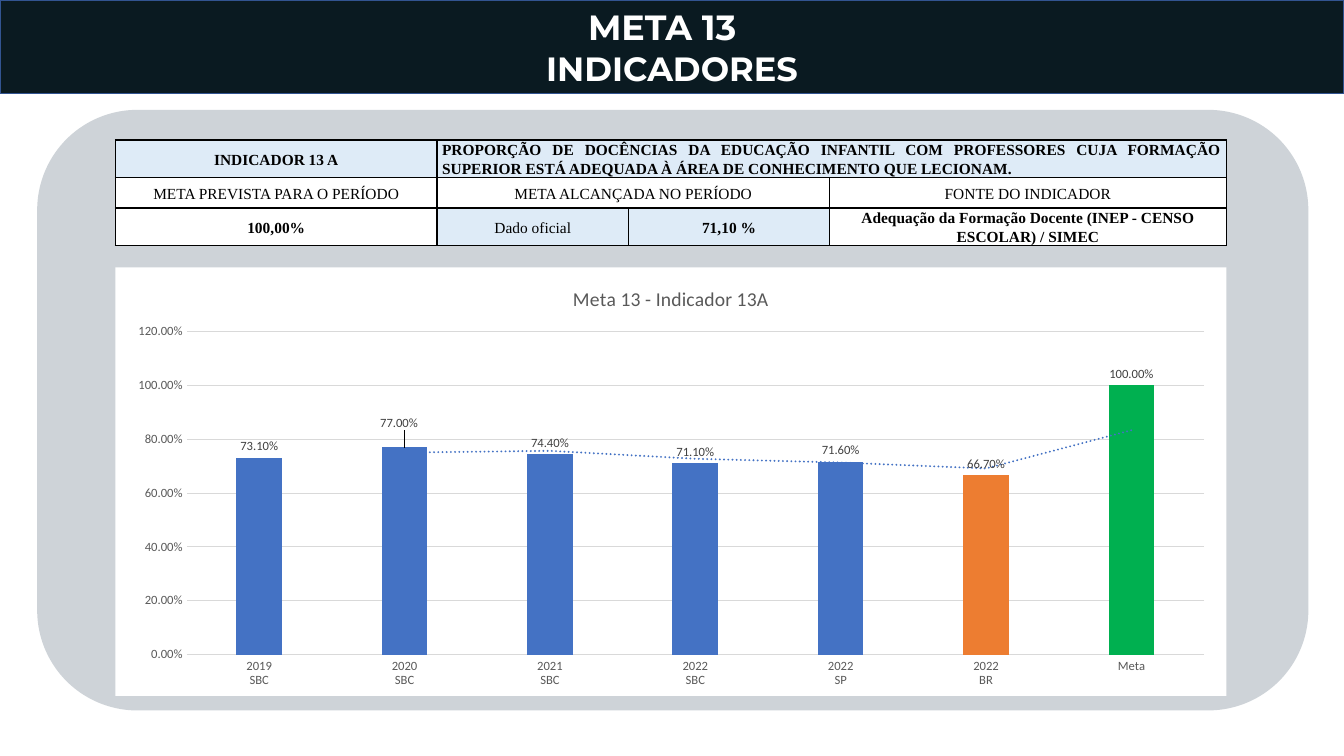
from lxml import etree
from pptx import Presentation
from pptx.chart.data import CategoryChartData
from pptx.dml.color import RGBColor
from pptx.enum.chart import XL_CHART_TYPE, XL_LABEL_POSITION, XL_TICK_MARK
from pptx.enum.shapes import MSO_SHAPE
from pptx.enum.text import MSO_ANCHOR, MSO_AUTO_SIZE, PP_ALIGN
from pptx.util import Pt

COLUMNS = XL_CHART_TYPE.COLUMN_CLUSTERED
OUTSIDE = XL_LABEL_POSITION.OUTSIDE_END
NO_TICK = XL_TICK_MARK.NONE
ROUNDED = MSO_SHAPE.ROUNDED_RECTANGLE
MIDDLE = MSO_ANCHOR.MIDDLE
NO_FIT = MSO_AUTO_SIZE.NONE
CENTER, JUSTIFY = PP_ALIGN.CENTER, PP_ALIGN.JUSTIFY

COLORS = {
    "navy": "0A1A21", "edge": "325491", "panel": "CED3D8", "white": "FFFFFF",
    "black": "000000", "pale": "DEEBF7", "grid": "D9D9D9", "gray": "595959",
    "label": "404040", "blue": "4472C4", "orange": "ED7D31", "green": "00B050",
}
A = "http://schemas.openxmlformats.org/drawingml/2006/main"
C = "http://schemas.openxmlformats.org/drawingml/2006/chart"

# Table rows: text, bold, fill, number of columns covered
ROWS = [
    [("INDICADOR 13 A", True, "pale", 1),
     ("PROPORÇÃO DE DOCÊNCIAS DA EDUCAÇÃO INFANTIL COM PROFESSORES CUJA "
      "FORMAÇÃO SUPERIOR ESTÁ ADEQUADA À ÁREA DE CONHECIMENTO QUE LECIONAM.",
      True, "pale", 3)],
    [("META PREVISTA PARA O PERÍODO", False, "white", 1),
     ("META ALCANÇADA NO PERÍODO", False, "white", 2),
     ("FONTE DO INDICADOR", False, "white", 1)],
    [("100,00%", True, "white", 1),
     ("Dado oficial", False, "pale", 1),
     ("71,10 %", True, "pale", 1),
     ("Adequação da Formação Docente (INEP - CENSO ESCOLAR) / SIMEC",
      True, "white", 1)],
]
COLUMN_WIDTHS = [229.7, 136.8, 143.6, 283.4]
ROW_HEIGHTS = [23, 21.6, 23]

VALUES = {
    "2019\nSBC": 0.731, "2020\nSBC": 0.77, "2021\nSBC": 0.744,
    "2022\nSBC": 0.711, "2022\nSP": 0.716, "2022\nBR": 0.667, "Meta": 1,
}
POINT_COLORS = {5: "orange", 6: "green"}


def rgb(name):
    return RGBColor.from_string(COLORS[name])


def xml(text):
    return etree.fromstring(text.replace(">", f' xmlns:a="{A}" xmlns:c="{C}">', 1))


def apply(target, values):
    for name, value in values.items():
        setattr(target, name, value)


def paint(fill, color):
    fill.solid()
    fill.fore_color.rgb = rgb(color)


def manual_layout(target, **places):
    inner = "".join(f'<c:{name} val="{value}"/>' for name, value in places.items())
    return xml(f"<c:layout><c:manualLayout>{target}{inner}</c:manualLayout></c:layout>")


class SlideBuilder:
    def __init__(self, deck, font):
        self.font = font
        self.page = deck.slides.add_slide(deck.slide_layouts[5])

    def style(self, font, size, color, bold=False, name=None):
        apply(font, {"name": name or self.font, "size": Pt(size), "bold": bold})
        font.color.rgb = rgb(color)

    def banner(self, place, lines):
        box = self.page.shapes.title
        apply(box, dict(zip(("left", "top", "width", "height"), map(Pt, place))))
        paint(box.fill, "navy")
        box.line.color.rgb = rgb("edge")
        box.line.width = Pt(1)
        frame = box.text_frame
        apply(frame, {"auto_size": NO_FIT, "word_wrap": True,
                      "vertical_anchor": MIDDLE})
        for number, (text, size, right_indent) in enumerate(lines):
            para = frame.add_paragraph() if number else frame.paragraphs[0]
            para.alignment = CENTER
            para._p.get_or_add_pPr().set("marR", str(Pt(right_indent)))
            span = para.add_run()
            span.text = text
            self.style(span.font, size, "white", True, "Montserrat")

    def panel(self, place):
        box = self.page.shapes.add_shape(ROUNDED, *map(Pt, place))
        box.shadow.inherit = False
        paint(box.fill, "panel")
        box.line.fill.background()

    def cell(self, cell, text, bold, fill, align):
        apply(cell, {"vertical_anchor": MIDDLE,
                     "margin_left": Pt(3.6), "margin_right": Pt(3.6),
                     "margin_top": Pt(0.7), "margin_bottom": 0})
        paint(cell.fill, fill)
        properties = cell._tc.get_or_add_tcPr()
        for index, side in enumerate("LRTB"):
            properties.insert(index, xml(
                f'<a:ln{side} w="{Pt(1)}"><a:solidFill><a:srgbClr '
                f'val="{COLORS["black"]}"/></a:solidFill></a:ln{side}>'))
        para = cell.text_frame.paragraphs[0]
        apply(para, {"alignment": align, "line_spacing": 1.07, "space_after": Pt(8)})
        self.style(para.font, 11, "black", bold, "Times New Roman")
        if text:
            span = para.add_run()
            span.text = text
            self.style(span.font, 11, "black", bold, "Times New Roman")

    def table(self, place, rows):
        table = self.page.shapes.add_table(
            len(rows), len(COLUMN_WIDTHS), *map(Pt, place)).table
        apply(table, {"first_row": False, "horz_banding": False})
        for column, width in zip(table.columns, COLUMN_WIDTHS):
            column.width = Pt(width)
        for number, (row, height) in enumerate(zip(rows, ROW_HEIGHTS)):
            table.rows[number].height = Pt(height)
            start = 0
            for text, bold, fill, count in row:
                align = JUSTIFY if count == 3 else CENTER
                for column in range(start, start + count):
                    self.cell(table.cell(number, column),
                              text if column == start else "", bold, fill, align)
                if count > 1:
                    table.cell(number, start).merge(
                        table.cell(number, start + count - 1))
                start += count

    def chart(self, place, title, values):
        data = CategoryChartData(number_format="0.00%")
        data.categories = list(values)
        data.add_series("Series 1", list(values.values()))
        chart = self.page.shapes.add_chart(COLUMNS, *map(Pt, place), data).chart
        self.style(chart.font, 10, "black")
        chart.has_legend = False
        chart.has_title = True
        chart.chart_title.include_in_layout = False
        span = chart.chart_title.text_frame.paragraphs[0].add_run()
        span.text = title
        self.style(span.font, 14, "gray")

        # White background and plot position
        root = chart._chartSpace
        root.find(f"{{{C}}}chart").addnext(xml(
            f'<c:spPr><a:solidFill><a:srgbClr val="{COLORS["white"]}"/></a:solidFill>'
            "<a:ln><a:noFill/></a:ln></c:spPr>"))
        area = root.find(f".//{{{C}}}plotArea")
        for old in area.findall(f"{{{C}}}layout"):
            area.remove(old)
        area.insert(0, manual_layout(
            '<c:layoutTarget val="inner"/>', xMode="edge", yMode="edge",
            x=0.064, y=0.15, w=0.916, h=0.754))

        # Axes
        category, value = chart.category_axis, chart.value_axis
        for axis in (category, value):
            apply(axis, {"major_tick_mark": NO_TICK, "minor_tick_mark": NO_TICK})
            self.style(axis.tick_labels.font, 9, "gray")
        apply(value, {"minimum_scale": 0, "maximum_scale": 1.2, "major_unit": 0.2})
        apply(value.tick_labels, {"number_format": "0.00%",
                                  "number_format_is_linked": False})
        value.format.line.fill.background()
        for line in (category.format.line, value.major_gridlines.format.line):
            line.color.rgb = rgb("grid")
            line.width = Pt(0.75)

        # Columns and labels
        plot = chart.plots[0]
        apply(plot, {"gap_width": 219, "overlap": -27, "vary_by_categories": False})
        series = plot.series[0]
        paint(series.format.fill, "blue")
        for index, color in POINT_COLORS.items():
            paint(series.points[index].format.fill, color)
        labels = series.data_labels
        apply(labels, {"show_value": True, "position": OUTSIDE,
                       "number_format": "0.00%", "number_format_is_linked": False})
        self.style(labels.font, 9, "label")
        raised = series.points[1].data_label
        raised.position = OUTSIDE
        self.style(raised.font, 9, "label")
        series._element.find(f".//{{{C}}}dLbl").insert(
            1, manual_layout("", x=-0.005, y=-0.03))

        # Two-period moving average
        series._element.find(f"{{{C}}}cat").addprevious(xml(
            f'<c:trendline><c:spPr><a:ln w="{Pt(1.5)}" cap="rnd"><a:solidFill>'
            f'<a:srgbClr val="{COLORS["blue"]}"/></a:solidFill>'
            '<a:prstDash val="sysDot"/></a:ln></c:spPr>'
            '<c:trendlineType val="movingAvg"/><c:period val="2"/>'
            '<c:dispRSqr val="0"/><c:dispEq val="0"/></c:trendline>'))


def main():
    deck = Presentation()
    deck.slide_width, deck.slide_height = Pt(960), Pt(540)
    builder = SlideBuilder(deck, "Calibri")
    builder.banner((0, 0, 960, 67), [("META 13", 25, 14), ("INDICADORES", 24, 0)])
    builder.panel((26.6, 78.5, 908, 429))
    builder.table((82.5, 100, 793.5, 67.6), ROWS)
    builder.chart((82.5, 191, 793.5, 306), "Meta 13 - Indicador 13A", VALUES)
    deck.save("out.pptx")


if __name__ == "__main__":
    main()
